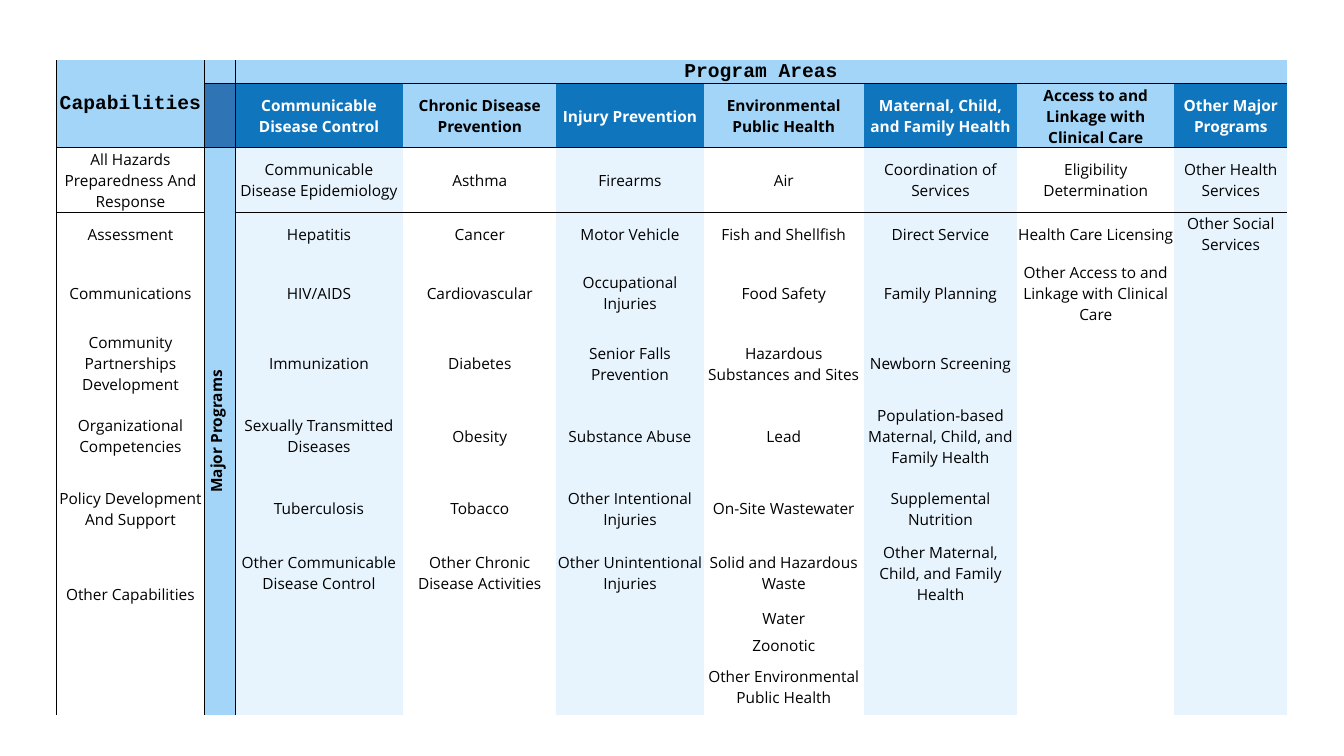
from lxml.etree import SubElement
from pptx import Presentation
from pptx.dml.color import RGBColor
from pptx.enum.text import MSO_ANCHOR as ANCHOR, PP_ALIGN as ALIGN
from pptx.oxml import parse_xml
from pptx.oxml.ns import nsdecls, qn
from pptx.util import Pt

PX = 9144  # 100 px to the inch
THEME = dict(
    light="A2D5F8", blue="0F75BC", corner="2F75B5", tint="E7F4FD",
    white="FFFFFF", black="000000",
    title_font="Courier New", body_font="Open Sans", title_size=14, body_size=11,
)
NO_STYLE_NO_GRID = "{2D5ABB26-0587-4C30-8999-92F81FD0307C}"
RULE_WIDTH = Pt(0.5)

COL_WIDTHS = [147, 30, 167, 152, 146, 159, 152, 156, 112]
ROW_HEIGHTS = [20, 49, 64, 37, 75, 64, 80, 64, 64, 27, 26, 56]
FIRST_BODY_ROW = 2

CAPABILITIES = [
    "All Hazards Preparedness And Response", "Assessment", "Communications",
    "Community Partnerships Development", "Organizational Competencies",
    "Policy Development And Support", "Other Capabilities",
]
PROGRAM_AREAS = {
    "Communicable Disease Control": [
        "Communicable Disease Epidemiology", "Hepatitis", "HIV/AIDS", "Immunization",
        "Sexually Transmitted Diseases", "Tuberculosis",
        "Other Communicable Disease Control"],
    "Chronic Disease Prevention": [
        "Asthma", "Cancer", "Cardiovascular", "Diabetes", "Obesity", "Tobacco",
        "Other Chronic Disease Activities"],
    "Injury Prevention": [
        "Firearms", "Motor Vehicle", "Occupational Injuries",
        "Senior Falls Prevention", "Substance Abuse", "Other Intentional Injuries",
        "Other Unintentional Injuries"],
    "Environmental Public Health": [
        "Air", "Fish and Shellfish", "Food Safety", "Hazardous Substances and Sites",
        "Lead", "On-Site Wastewater", "Solid and Hazardous Waste", "Water",
        "Zoonotic", "Other Environmental Public Health"],
    "Maternal, Child, and Family Health": [
        "Coordination of Services", "Direct Service", "Family Planning",
        "Newborn Screening", "Population-based Maternal, Child, and Family Health",
        "Supplemental Nutrition", "Other Maternal, Child, and Family Health"],
    "Access to and Linkage with Clinical Care": [
        "Eligibility Determination", "Health Care Licensing",
        "Other Access to and Linkage with Clinical Care"],
    "Other Major Programs": ["Other Health Services", "Other Social Services"],
}


def write(cell, text, font="body_font", size="body_size", color="black",
          bold=False, anchor=ANCHOR.MIDDLE):
    cell.vertical_anchor = anchor
    p = cell.text_frame.paragraphs[0]
    p.alignment = ALIGN.CENTER
    r = p.add_run()
    r.text = text
    r.font.name = THEME[font]
    r.font.size = Pt(THEME[size])
    r.font.bold = bold
    r.font.color.rgb = RGBColor.from_string(THEME[color])


def style_cell(cell, fill, sides):
    """Set the insets and fill, and rule the sides named by letters of LRTB."""
    cell.margin_left = cell.margin_top = cell.margin_right = PX
    cell.margin_bottom = 0
    cell.fill.solid()
    cell.fill.fore_color.rgb = RGBColor.from_string(THEME[fill])
    for i, side in enumerate(sides):
        cell._tc.tcPr.insert(i, parse_xml(
            f'<a:ln{side} {nsdecls("a")} w="{RULE_WIDTH}"><a:solidFill>'
            f'<a:srgbClr val="{THEME["black"]}"/></a:solidFill></a:ln{side}>'))


prs = Presentation()
prs.slide_width, prs.slide_height = 1333 * PX, 750 * PX
slide = prs.slides.add_slide(prs.slide_layouts[6])

table = slide.shapes.add_table(
    len(ROW_HEIGHTS), len(COL_WIDTHS), 56 * PX, 60 * PX, 1221 * PX, 639 * PX).table
table.first_row = table.horz_banding = False
table._tbl.tblPr.find(qn("a:tableStyleId")).text = NO_STYLE_NO_GRID
for column, width in zip(table.columns, COL_WIDTHS):
    column.width = width * PX
for row, height in zip(table.rows, ROW_HEIGHTS):
    row.height = height * PX

# Fills and rules
for r in range(len(ROW_HEIGHTS)):
    for c in range(len(COL_WIDTHS)):
        if r == 1 and c > 0:
            fill = "corner" if c == 1 else "light" if c % 2 else "blue"
        elif r < FIRST_BODY_ROW or c == 1:
            fill = "light"
        else:
            fill = "white" if c == 0 or c % 2 else "tint"
        sides = "L" if c < 2 else ""
        sides += "R" if c == 0 else ""
        sides += "T" if r == 2 or (r == 1 and c > 0) else ""
        sides += "B" if r < FIRST_BODY_ROW else ""
        style_cell(table.cell(r, c), fill, sides)

# Headings
table.cell(0, 0).merge(table.cell(1, 0))
table.cell(0, 2).merge(table.cell(0, 8))
table.cell(2, 1).merge(table.cell(11, 1))
title = dict(font="title_font", size="title_size", bold=True)
write(table.cell(0, 0), "Capabilities", **title)
write(table.cell(0, 2), "Program Areas", anchor=ANCHOR.BOTTOM, **title)
write(table.cell(2, 1), "Major Programs", bold=True)
table.cell(2, 1)._tc.tcPr.set("vert", "vert270")

# Body columns
for r, capability in enumerate(CAPABILITIES, FIRST_BODY_ROW):
    last = capability == CAPABILITIES[-1]
    write(table.cell(r, 0), capability,
          anchor=ANCHOR.BOTTOM if last else ANCHOR.MIDDLE)
for c, (area, programs) in enumerate(PROGRAM_AREAS.items(), 2):
    write(table.cell(1, c), area, bold=True, color="black" if c % 2 else "white")
    for r, program in enumerate(programs, FIRST_BODY_ROW):
        write(table.cell(r, c), program)

# Empty cells take the body size so that they do not stretch their rows
for cell in table.iter_cells():
    if not cell.text_frame.text:
        p = cell.text_frame.paragraphs[0]
        SubElement(p._p, qn("a:endParaRPr"), sz=str(THEME["body_size"] * 100))

prs.save("out.pptx")
